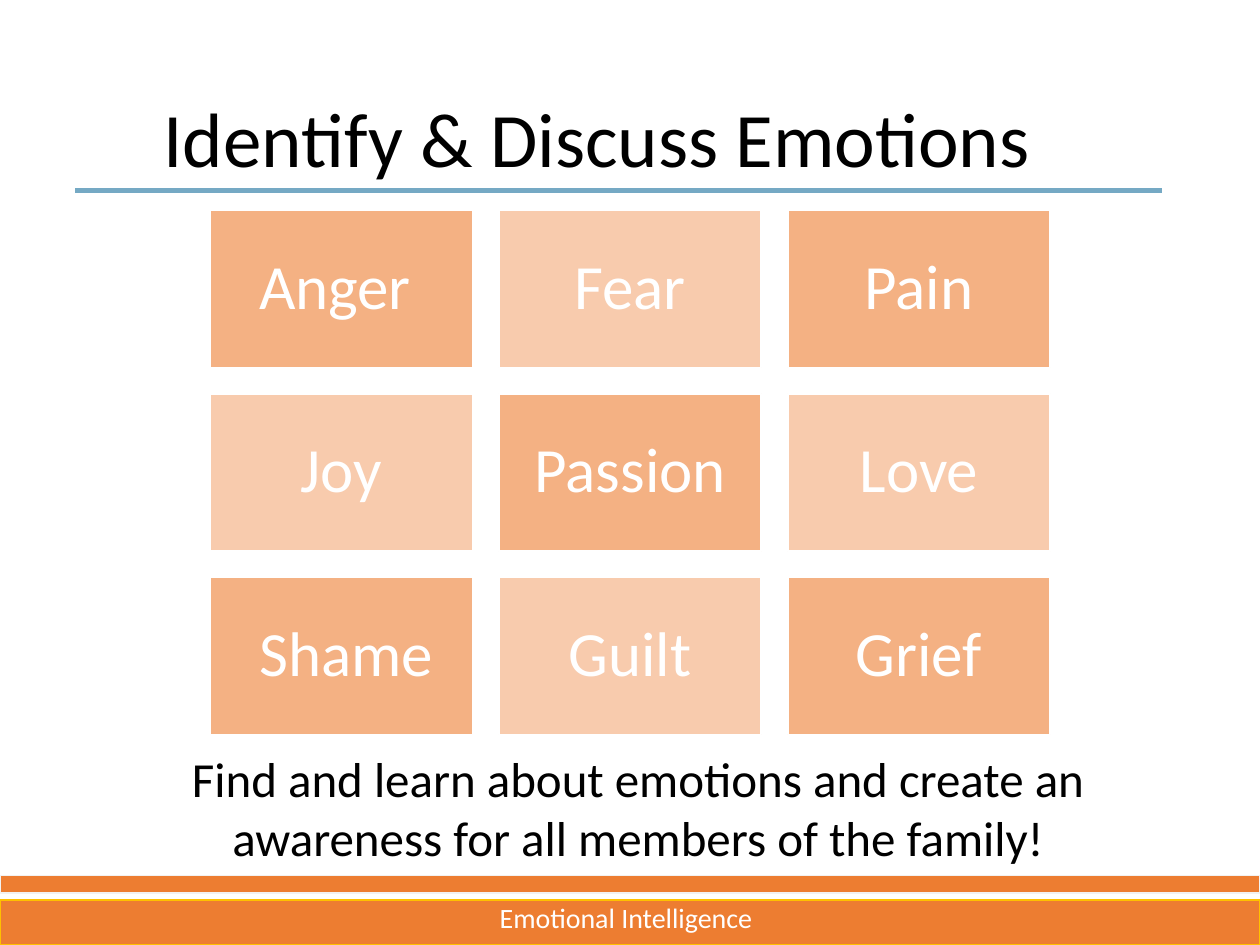
from dataclasses import dataclass
from typing import NamedTuple

from lxml.etree import SubElement
from pptx import Presentation
from pptx.dml.color import RGBColor
from pptx.enum.shapes import MSO_CONNECTOR as Connector, MSO_SHAPE as Shape
from pptx.enum.text import MSO_ANCHOR as Anchor, PP_ALIGN as Align
from pptx.oxml.ns import qn
from pptx.util import Cm, Pt


@dataclass(frozen=True)
class Theme:
    font: str = "Calibri"
    ink: str = "000000"
    paper: str = "FFFFFF"
    rule: str = "75A9C4"
    band: str = "ED7D31"
    band_edge: str = "FFC000"
    stripe_edge: str = "F2F2F2"
    tiles: tuple = ("F4B183", "F8CBAD")
    title_size: int = 44
    tile_size: int = 36
    caption_size: int = 28
    footer_size: int = 16


class Box(NamedTuple):
    """Left, top, width and height in centimetres."""
    left: float
    top: float
    width: float
    height: float

    def lengths(self):
        return [Cm(value) for value in self]


THEME = Theme()
EMOTIONS = (
    ("Anger", "Fear", "Pain"),
    ("Joy", "Passion", "Love"),
    ("Shame", "Guilt", "Grief"),
)
TILE_SHIFTS = {"Anger": -0.13, "Shame": 0.1}
TILE_GAP = 0.53
TILE_INSET = 0.38


def set_attributes(target, values):
    for name, value in values.items():
        setattr(target, name, value)


def write(shape, text, size, color, align=Align.CENTER, spacing=1.0, **frame_format):
    frame = shape.text_frame
    set_attributes(frame, {"word_wrap": True, **frame_format})
    paragraph = frame.paragraphs[0]
    paragraph.text = text
    set_attributes(paragraph, {"alignment": align, "line_spacing": spacing})
    set_attributes(paragraph.font, {"name": THEME.font, "size": Pt(size)})
    paragraph.font.color.rgb = RGBColor.from_string(color)


def add_text(slide, box, *text_format, **frame_format):
    write(slide.shapes.add_textbox(*box.lengths()), *text_format, **frame_format)


def add_rectangle(slide, box, fill, edge):
    shape = slide.shapes.add_shape(Shape.RECTANGLE, *box.lengths())
    shape.shadow.inherit = False
    shape.fill.solid()
    shape.fill.fore_color.rgb = RGBColor.from_string(fill)
    shape.line.color.rgb = RGBColor.from_string(edge)
    shape.line.width = Pt(1)
    return shape


def add_header(slide, box):
    """Title with a rule that starts at the left edge of the box."""
    title = Box(box.left + 1.53, box.top, box.width - 1.53, box.height)
    add_text(slide, title, "Identify & Discuss Emotions", THEME.title_size, THEME.ink,
             Align.LEFT, 0.9, vertical_anchor=Anchor.MIDDLE)
    rule_top = Cm(box.top + 2.8)
    rule = slide.shapes.add_connector(
        Connector.STRAIGHT, Cm(box.left), rule_top, Cm(box.left + box.width), rule_top)
    rule.line.color.rgb = RGBColor.from_string(THEME.rule)
    rule.line.width = Pt(3)
    SubElement(rule._element.spPr, qn("a:effectLst"))


def add_emotion_grid(slide, box):
    """Equal tiles in two alternating tints."""
    rows, columns = len(EMOTIONS), len(EMOTIONS[0])
    width = (box.width - (columns - 1) * TILE_GAP) / columns
    height = (box.height - (rows - 1) * TILE_GAP) / rows
    for row, emotions in enumerate(EMOTIONS):
        for column, emotion in enumerate(emotions):
            tile_box = Box(box.left + column * (width + TILE_GAP),
                           box.top + row * (height + TILE_GAP), width, height)
            tint = THEME.tiles[(row + column) % 2]
            tile = add_rectangle(slide, tile_box, tint, THEME.paper)
            shift = TILE_SHIFTS.get(emotion, 0)
            write(tile, emotion, THEME.tile_size, THEME.paper, spacing=0.9,
                  vertical_anchor=Anchor.MIDDLE,
                  margin_left=Cm(TILE_INSET + shift), margin_right=Cm(TILE_INSET - shift))


def add_caption(slide, box):
    add_text(slide, box,
             "Find and learn about emotions and create an awareness "
             "for all members of the family!", THEME.caption_size, THEME.ink)


def add_footer(slide, box):
    """Thin stripe above a band that carries the course name."""
    band = Box(box.left, box.top + 0.49, box.width, box.height - 0.49)
    add_rectangle(slide, band, THEME.band, THEME.band_edge)
    add_rectangle(slide, Box(box.left, box.top, box.width, 0.36),
                  THEME.band, THEME.stripe_edge)
    label = Box(box.left + 9.42, box.top + 0.38, 6.4, 0.94)
    add_text(slide, label, "Emotional Intelligence", THEME.footer_size, THEME.paper)


def main():
    presentation = Presentation()
    set_attributes(presentation, {"slide_width": Cm(25.4), "slide_height": Cm(19.05)})
    slide = presentation.slides.add_slide(presentation.slide_layouts[6])
    add_header(slide, Box(1.52, 1.04, 21.9, 3.68))
    add_caption(slide, Box(1.52, 14.96, 22.68, 2.64))
    add_footer(slide, Box(0, 17.65, 25.4, 1.4))
    add_emotion_grid(slide, Box(4.24, 4.24, 16.93, 10.57))
    presentation.save("out.pptx")


if __name__ == "__main__":
    main()
